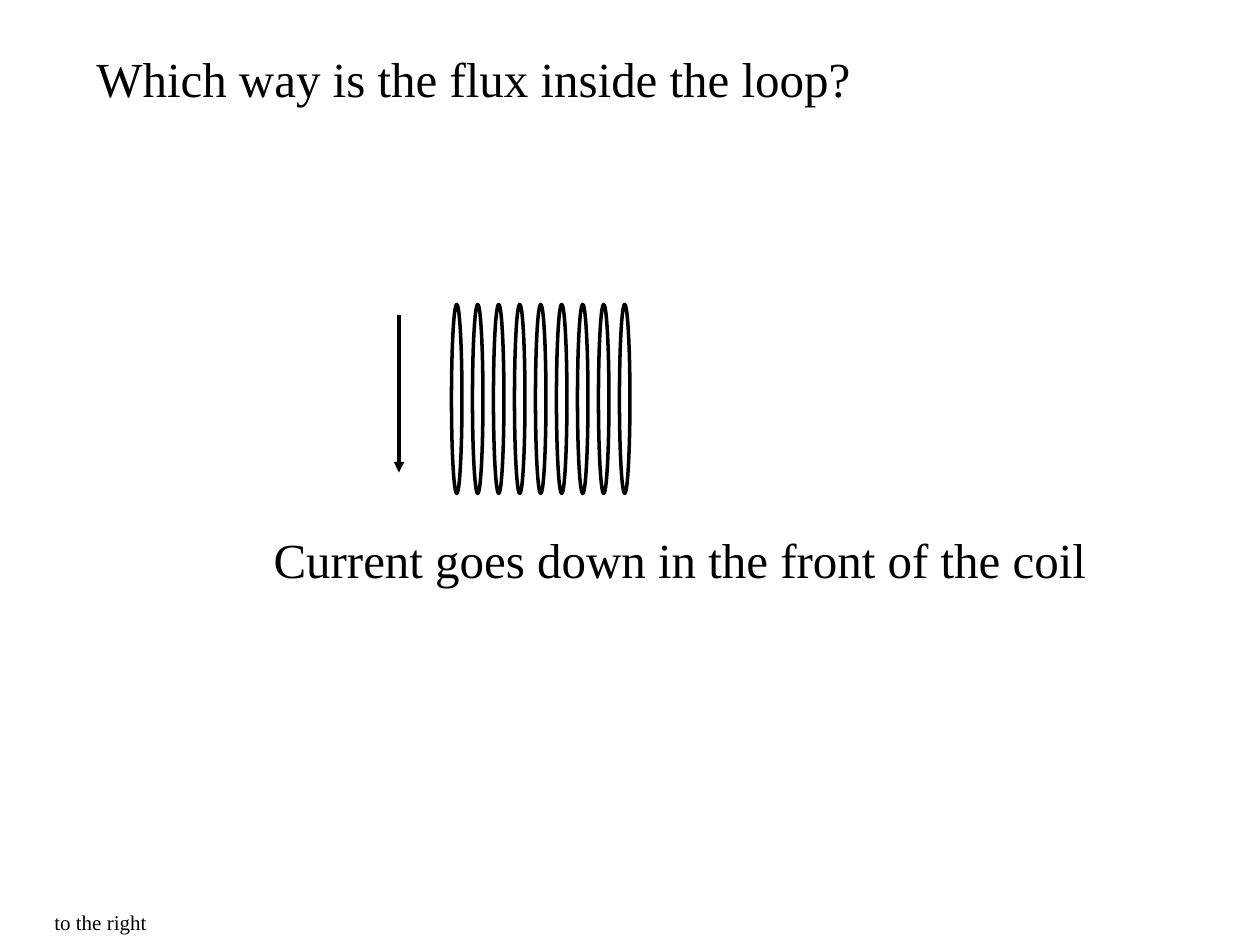
from dataclasses import dataclass

from lxml import etree
from pptx import Presentation
from pptx.dml.color import RGBColor
from pptx.enum import shapes, text
from pptx.oxml import ns
from pptx.slide import Slide
from pptx.util import Emu, Pt

PX = 9525  # EMU per px, 96 px to the inch
BLACK = "000000"
FONT = "Times New Roman"
LINE_WIDTH = Pt(2)


@dataclass
class Label:
    words: str
    left: int
    top: int
    width: int
    height: int
    size: int


@dataclass
class Coil:
    left: int
    top: int
    turn_width: int
    height: int
    pitch: int
    turns: int


LABELS = [
    Label("Which way is the flux inside the loop?", 64, 32, 594, 55, 28),
    Label("Current goes down in the front of the coil", 199, 399, 639, 55, 28),
    Label("to the right", 32, 688, 90, 29, 12),
]
COIL = Coil(left=344, top=232, turn_width=8, height=144, pitch=16, turns=9)


def px(length: int) -> Emu:
    return Emu(length * PX)


def colour(value: str) -> RGBColor:
    return RGBColor.from_string(value)


def draw_label(page: Slide, label: Label) -> None:
    box = page.shapes.add_textbox(
        px(label.left), px(label.top), px(label.width), px(label.height))
    frame = box.text_frame
    frame.word_wrap = False
    frame.auto_size = text.MSO_AUTO_SIZE.SHAPE_TO_FIT_TEXT
    para = frame.paragraphs[0]
    para.text = label.words
    para.font.name = FONT
    para.font.size = Pt(label.size)
    para.font.color.rgb = colour(BLACK)


def draw_coil(page: Slide, coil: Coil) -> None:
    for turn in range(coil.turns):
        loop = page.shapes.add_shape(
            shapes.MSO_SHAPE.OVAL, px(coil.left + turn * coil.pitch),
            px(coil.top), px(coil.turn_width), px(coil.height))
        loop.shadow.inherit = False
        loop.fill.background()
        loop.line.color.rgb = colour(BLACK)
        loop.line.width = LINE_WIDTH


def draw_down_arrow(page: Slide, x: int, top: int, bottom: int) -> None:
    arrow = page.shapes.add_connector(
        shapes.MSO_CONNECTOR.STRAIGHT, px(x), px(top), px(x), px(bottom))
    arrow.line.color.rgb = colour(BLACK)
    arrow.line.width = LINE_WIDTH
    properties = arrow.element.spPr
    outline = properties.find(ns.qn("a:ln"))
    etree.SubElement(outline, ns.qn("a:tailEnd"), type="triangle")
    etree.SubElement(properties, ns.qn("a:effectLst"))


def main() -> None:
    deck = Presentation()
    deck.slide_width, deck.slide_height = px(960), px(720)
    page = deck.slides.add_slide(deck.slide_layouts[6])

    # Coil and the direction of its current
    draw_coil(page, COIL)
    draw_down_arrow(page, x=304, top=240, bottom=360)

    # Question, caption and answer
    for label in LABELS:
        draw_label(page, label)

    deck.save("out.pptx")


if __name__ == "__main__":
    main()
